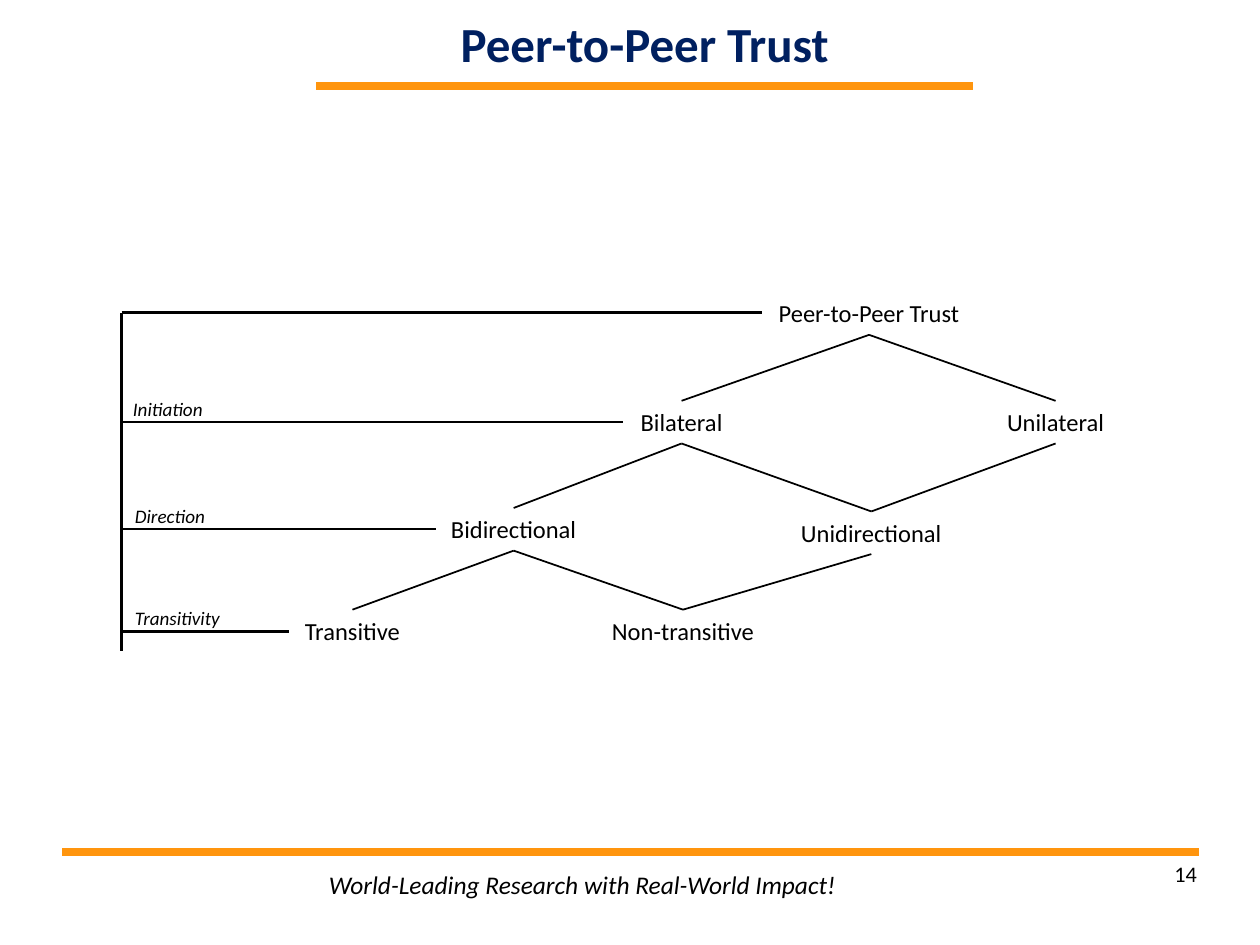
import pptx
import pptx.dml.color
import pptx.enum.shapes
import pptx.enum.text
import pptx.oxml.ns
import pptx.util
from lxml import etree
from pptx.util import Cm

ALIGN = pptx.enum.text.PP_ALIGN
ANCHOR = pptx.enum.text.MSO_ANCHOR
AUTO_SIZE = pptx.enum.text.MSO_AUTO_SIZE
BLACK, NAVY, ORANGE = "000000", "002060", "FF950E"
BOTTOM, TOP = 2, 0

presentation = pptx.Presentation()
presentation.slide_width = Cm(25.4)
presentation.slide_height = Cm(19.05)
slide = presentation.slides.add_slide(presentation.slide_layouts[6])


def add_text(text, box, size, align=ALIGN.LEFT, color=BLACK, bold=False, italic=False):
    """Add a one-line text box; box is left, top, width, height in centimetres."""
    shape = slide.shapes.add_textbox(*(Cm(length) for length in box))
    frame = shape.text_frame
    frame.text = text
    frame.word_wrap = True
    frame.auto_size = AUTO_SIZE.SHAPE_TO_FIT_TEXT
    paragraph = frame.paragraphs[0]
    paragraph.alignment = align
    font = paragraph.runs[0].font
    font.name = "Calibri"
    font.size = pptx.util.Pt(size)
    font.bold = bold
    font.italic = italic
    font.color.rgb = pptx.dml.color.RGBColor.from_string(color)
    return shape


def add_line(start, end, width, color=BLACK):
    """Add a straight line between two points in centimetres."""
    line = slide.shapes.add_connector(
        pptx.enum.shapes.MSO_CONNECTOR.STRAIGHT,
        *(Cm(length) for length in (*start, *end)))
    line.line.width = pptx.util.Pt(width)
    line.line.color.rgb = pptx.dml.color.RGBColor.from_string(color)
    etree.SubElement(line._element.spPr, pptx.oxml.ns.qn("a:effectLst"))
    return line


# Title, footer and their rules
add_line((6.38, 1.73), (19.61, 1.73), 4.31, ORANGE)
add_line((1.25, 17.17), (24.18, 17.17), 4.31, ORANGE)

title = add_text("Peer-to-Peer Trust", (5.59, 0, 14.81, 1.73), 28, ALIGN.CENTER, NAVY, bold=True)
title.text_frame.vertical_anchor = ANCHOR.MIDDLE
number = add_text("14", (18.21, 17.35, 5.92, 1.3), 12.7, ALIGN.RIGHT)
for shape in (title, number):
    frame = shape.text_frame
    frame.auto_size = AUTO_SIZE.NONE
    frame.margin_left = frame.margin_right = frame.margin_top = frame.margin_bottom = 0

motto = add_text("World-Leading Research with Real-World Impact!",
                 (6.38, 17.4, 10.85, 0.89), 14.5, italic=True)
motto.text_frame.word_wrap = False

# Tree nodes: left, top, width
NODES = {
    "Peer-to-Peer Trust": (15.21, 5.89, 4.62),
    "Bilateral": (11.48, 8.08, 4.52),
    "Unilateral": (19.02, 8.08, 4.52),
    "Bidirectional": (8.36, 10.24, 3.99),
    "Unidirectional": (15.75, 10.31, 3.63),
    "Transitive": (5.11, 12.29, 3.99),
    "Non-transitive": (11.51, 12.29, 4.52),
}
node_shapes = {
    name: add_text(name, (*place, 0.86), 14, ALIGN.CENTER) for name, place in NODES.items()
}

BRANCHES = {
    "Peer-to-Peer Trust": ("Bilateral", "Unilateral"),
    "Bilateral": ("Bidirectional", "Unidirectional"),
    "Unilateral": ("Unidirectional",),
    "Bidirectional": ("Transitive", "Non-transitive"),
    "Unidirectional": ("Non-transitive",),
}
for parent, children in BRANCHES.items():
    for child in children:
        branch = add_line((0, 0), (0, 0), 1)
        branch.begin_connect(node_shapes[parent], BOTTOM)
        branch.end_connect(node_shapes[child], TOP)

# Criteria scale: label, label left, line height, line end
SCALE_LEFT = 2.45
LEVELS = [
    (None, None, 6.3, 15.37),
    ("Initiation", 2.43, 8.51, 12.55),
    ("Direction", 2.47, 10.67, 8.79),
    ("Transitivity", 2.47, 12.73, 5.82),
]
add_line((SCALE_LEFT, 6.3), (SCALE_LEFT, 13.13), 1.25)
for label, left, height, end in LEVELS:
    add_line((SCALE_LEFT, height), (end, height), 1.25)
    if label:
        add_text(label, (left, height - 0.63, 2.6, 0.71), 10.9, italic=True)

presentation.save("out.pptx")
